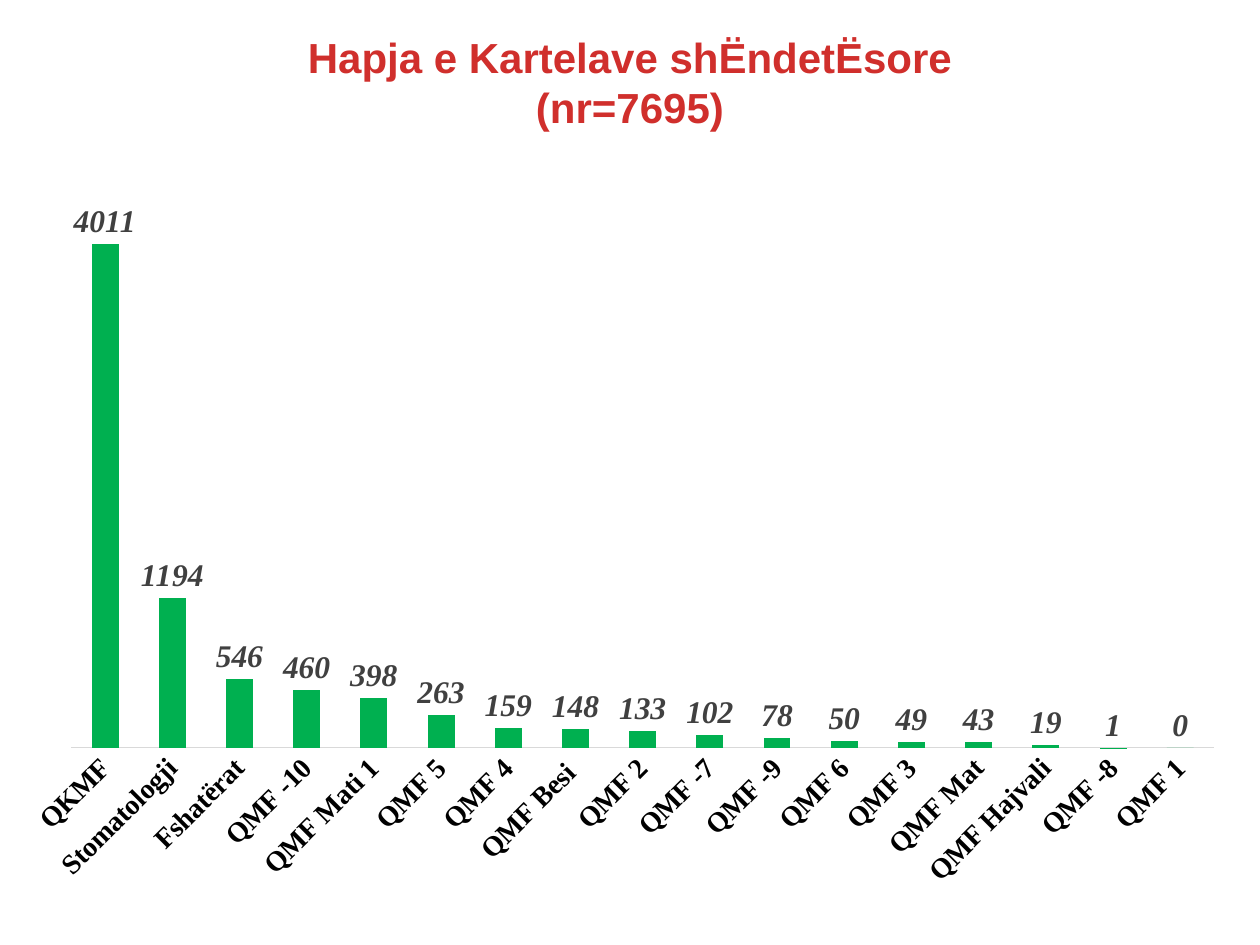
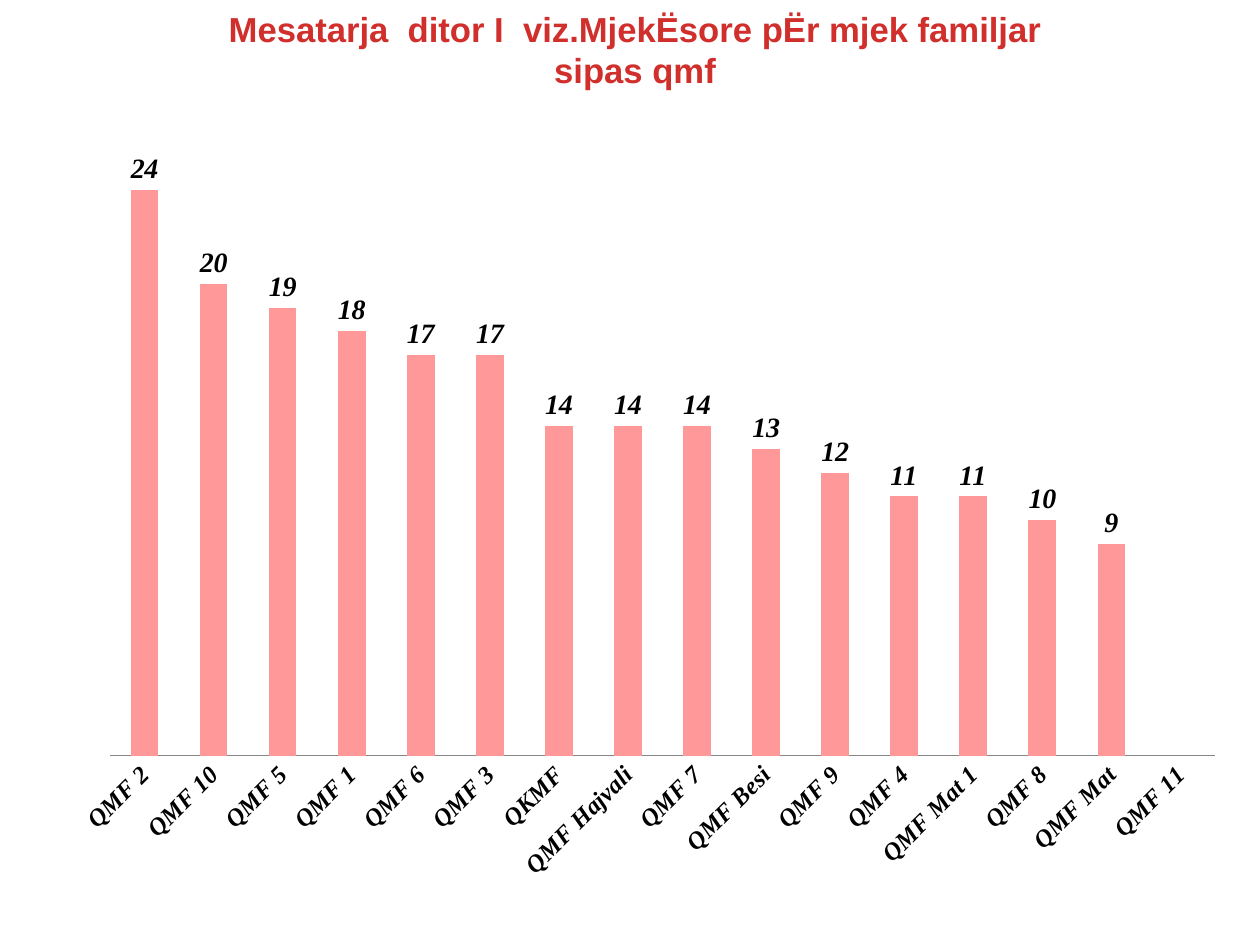
import pptx
import pptx.chart.data
import pptx.dml.color
import pptx.enum.chart
import pptx.enum.text
import pptx.oxml
import pptx.oxml.ns
import pptx.util

Inches = pptx.util.Inches
Pt = pptx.util.Pt
RGBColor = pptx.dml.color.RGBColor

TITLE_RED = RGBColor(0xD0, 0x2F, 0x2C)
BLACK = RGBColor(0, 0, 0)
DARK_GREY = RGBColor(0x40, 0x40, 0x40)
PALE_GREY = RGBColor(0xD9, 0xD9, 0xD9)
MID_GREY = RGBColor(0x86, 0x86, 0x86)
GREEN = RGBColor(0x00, 0xB0, 0x50)
PINK = RGBColor(0xFF, 0x99, 0x99)
TITLE_FONT = "Arial"
BASE_FONT = "Calibri"
CHART_FONT = "Times New Roman"

CARD_COUNTS = {
    "QKMF": 4011, "Stomatologji": 1194, "Fshatërat": 546, "QMF -10": 460,
    "QMF Mati 1": 398, "QMF 5": 263, "QMF 4": 159, "QMF Besi ": 148,
    "QMF 2": 133, "QMF -7": 102, "QMF -9": 78, "QMF 6": 50, "QMF 3": 49,
    "QMF Mat": 43, "QMF Hajvali": 19, "QMF -8": 1, "QMF 1": 0,
}
DAILY_VISITS = {
    "QMF 2": 24, "QMF 10": 20, "QMF 5": 19, "QMF 1": 18, "QMF 6": 17,
    "QMF 3": 17, "QKMF": 14, "QMF Hajvali": 14, "QMF 7": 14, "QMF Besi": 13,
    "QMF 9": 12, "QMF 4": 11, "QMF Mat 1": 11, "QMF 8": 10, "QMF Mat": 9,
    "QMF 11": None,
}


def style_font(font, name, size, color, bold=True, italic=False):
    """Set every font property used in the deck."""
    font.name, font.size = name, Pt(size)
    font.bold, font.italic = bold, italic
    font.color.rgb = color


def add_title(slide, box, lines, size):
    """Place the title placeholder in box and write its centred lines."""
    title = slide.shapes.title
    title.left, title.top, title.width, title.height = map(Inches, box)
    frame = title.text_frame
    frame.auto_size = pptx.enum.text.MSO_AUTO_SIZE.NONE
    frame.vertical_anchor = pptx.enum.text.MSO_ANCHOR.MIDDLE
    paragraph = frame.paragraphs[0]
    paragraph.alignment = pptx.enum.text.PP_ALIGN.CENTER
    for index, line in enumerate(lines):
        if index:
            paragraph.add_line_break()
        run = paragraph.add_run()
        run.text = line
        style_font(run.font, TITLE_FONT, size, TITLE_RED)


def set_plot_layout(chart, fractions):
    """Fix the inner plot area as fractions (x, y, w, h) of the chart."""
    plot_area = chart._chartSpace.chart.plotArea
    for layout in plot_area.findall(pptx.oxml.ns.qn("c:layout")):
        plot_area.remove(layout)
    sizes = "".join(f'<c:{key} val="{value}"/>' for key, value in zip("xywh", fractions))
    plot_area.insert(0, pptx.oxml.parse_xml(
        f'<c:layout {pptx.oxml.ns.nsdecls("c")}><c:manualLayout>'
        '<c:layoutTarget val="inner"/><c:xMode val="edge"/><c:yMode val="edge"/>'
        f'{sizes}</c:manualLayout></c:layout>'))


def add_columns(slide, box, counts, maximum, plot_box, fill, axis_line,
                axis_size, axis_italic, label_size, label_color, overlap):
    """Draw a labelled column chart in box with slanted category names."""
    data = pptx.chart.data.CategoryChartData(number_format="0")
    data.categories = list(counts)
    data.add_series("Series 1", list(counts.values()))
    chart = slide.shapes.add_chart(
        pptx.enum.chart.XL_CHART_TYPE.COLUMN_CLUSTERED, *map(Inches, box), data).chart
    style_font(chart.font, BASE_FONT, 10, BLACK, bold=False)
    chart.has_title = chart.has_legend = False
    set_plot_layout(chart, plot_box)

    centres = chart.category_axis
    centres.major_tick_mark = pptx.enum.chart.XL_TICK_MARK.NONE
    centres.format.line.color.rgb = axis_line
    centres.format.line.width = Pt(0.75)
    style_font(centres.tick_labels.font, CHART_FONT, axis_size, BLACK, italic=axis_italic)
    slant = centres._element.find(".//" + pptx.oxml.ns.qn("a:bodyPr"))
    slant.set("rot", "-2700000")
    slant.set("vert", "horz")

    scale = chart.value_axis
    scale.minimum_scale, scale.maximum_scale = 0, maximum
    scale.has_major_gridlines = False
    scale.visible = False

    plot = chart.plots[0]
    plot.gap_width, plot.overlap = 150, overlap
    plot.vary_by_categories = False
    columns = plot.series[0]
    columns.format.fill.solid()
    columns.format.fill.fore_color.rgb = fill
    labels = columns.data_labels
    labels.show_value = True
    labels.number_format, labels.number_format_is_linked = "0", False
    labels.position = pptx.enum.chart.XL_LABEL_POSITION.OUTSIDE_END
    style_font(labels.font, CHART_FONT, label_size, label_color, italic=True)


def add_cards_slide(slide):
    """Build the slide on opened health cards."""
    add_title(slide, (0, -0.21, 10, 1.72),
              ["Hapja e Kartelave shËndetËsore", "(nr=7695)"], 24)
    add_columns(slide, (0.08, 1.33, 9.75, 5.83), CARD_COUNTS, 4500,
                (0.05, 0.02, 0.93, 0.77), GREEN, PALE_GREY,
                axis_size=16, axis_italic=False,
                label_size=18, label_color=DARK_GREY, overlap=-25)


def add_visits_slide(slide):
    """Build the slide on daily visits per family doctor."""
    add_title(slide, (0, 0.04, 10.08, 0.7),
              ["Mesatarja  ditor I  viz.MjekËsore pËr mjek familjar", "sipas qmf"], 19.8)
    add_columns(slide, (0.5, 1.08, 9.33, 6), DAILY_VISITS, 25,
                (0.04, 0.04, 0.94, 0.78), PINK, MID_GREY,
                axis_size=14, axis_italic=True,
                label_size=16, label_color=BLACK, overlap=0)


def main():
    """Build both slides and save the deck."""
    deck = pptx.Presentation()
    deck.slide_width, deck.slide_height = Inches(10), Inches(7.5)
    for build in (add_cards_slide, add_visits_slide):
        build(deck.slides.add_slide(deck.slide_layouts[5]))
    deck.save("out.pptx")


if __name__ == "__main__":
    main()
